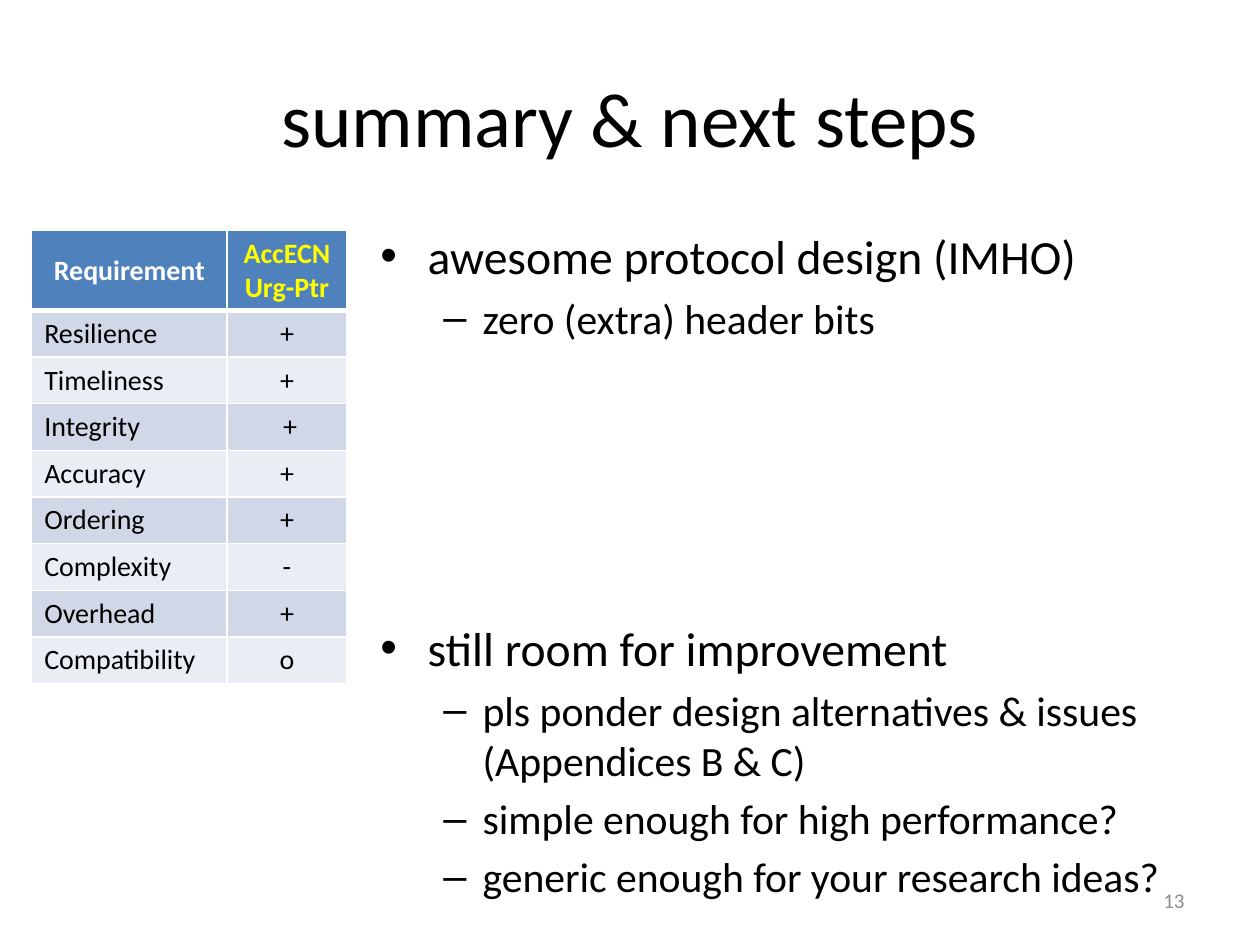
import pptx
import pptx.util
import pptx.dml.color
import pptx.enum.text
import pptx.oxml
import pptx.oxml.ns
from lxml import etree

Cm = pptx.util.Cm
Pt = pptx.util.Pt
ALIGN = pptx.enum.text.PP_ALIGN
MIDDLE = pptx.enum.text.MSO_ANCHOR.MIDDLE
FONT = "Calibri"
HUES = {
    "text": "000000",
    "page": "8C8C8C",
    "white": "FFFFFF",
    "gold": "FFFF00",
    "head": "4F81BD",
    "odd": "D0D8E8",
    "even": "E9EDF4",
}
HEADS = [("Requirement", "white"), ("AccECN\vUrg-Ptr", "gold")]
GRADES = [
    ("Resilience", "+"),
    ("Timeliness", "+"),
    ("Integrity", " +"),
    ("Accuracy", "+"),
    ("Ordering", "+"),
    ("Complexity", "-"),
    ("Overhead", "+"),
    ("Compatibility", "o"),
]
LEVELS = [
    {"mark": "•", "size": 27.2, "left": 0.95, "hang": 0.95},
    {"mark": "–", "size": 23.8, "left": 2.06, "hang": 0.79},
]
POINTS = [
    (0, "awesome protocol design (IMHO)"),
    (1, "zero (extra) header bits"),
    (0, "still room for improvement"),
    (1, "pls ponder design alternatives & issues (Appendices B & C)"),
    (1, "simple enough for high performance?"),
    (1, "generic enough for your research ideas?"),
]
GAP = 158


def color(name):
    return pptx.dml.color.RGBColor.from_string(HUES[name])


def style(para, size, hue="text", align=ALIGN.LEFT, bold=False):
    para.alignment = align
    para.font.name = FONT
    para.font.size = Pt(size)
    para.font.bold = bold
    para.font.color.rgb = color(hue)


def add_title(slide, text):
    title = slide.shapes.title
    title.left, title.top = Cm(1.27), Cm(0.76)
    title.width, title.height = Cm(22.86), Cm(3.18)
    title.text_frame.text = text
    title.text_frame.vertical_anchor = MIDDLE
    style(title.text_frame.paragraphs[0], 44, align=ALIGN.CENTER)


def add_box(slide, left, top, width, height):
    box = slide.shapes.add_textbox(Cm(left), Cm(top), Cm(width), Cm(height))
    box.text_frame.word_wrap = True
    return box.text_frame


def add_mark(para, level):
    props = para._p.get_or_add_pPr()
    props.set("marL", str(Cm(level["left"])))
    props.set("indent", str(-Cm(level["hang"])))
    tag = pptx.oxml.ns.qn("a:buFont")
    etree.SubElement(props, tag).set("typeface", "Arial")
    tag = pptx.oxml.ns.qn("a:buChar")
    etree.SubElement(props, tag).set("char", level["mark"])


def add_points(slide):
    frame = add_box(slide, 7.42, 4.45, 17.14, 12.57)
    for index, (depth, text) in enumerate(POINTS):
        para = frame.paragraphs[0] if index == 0 else frame.add_paragraph()
        level = LEVELS[depth]
        para.text = text
        para.level = depth
        style(para, level["size"])
        new = depth == 0 and index > 0
        para.space_before = Pt(GAP if new else round(level["size"] * 0.2, 1))
        add_mark(para, level)


def add_edges(cell, base):
    props = cell._tc.get_or_add_tcPr()
    for side in ("lnL", "lnR", "lnT", "lnB"):
        line = etree.SubElement(props, pptx.oxml.ns.qn("a:" + side))
        line.set("w", str(Pt(base if side == "lnB" else 1)))
        fill = etree.SubElement(line, pptx.oxml.ns.qn("a:solidFill"))
        tint = etree.SubElement(fill, pptx.oxml.ns.qn("a:srgbClr"))
        tint.set("val", HUES["white"])


def fill_cell(cell, text, fill, hue="text", align=ALIGN.CENTER, head=False):
    cell.text = text
    cell.vertical_anchor = MIDDLE
    style(cell.text_frame.paragraphs[0], 16, hue, align, head)
    add_edges(cell, 3 if head else 1)
    cell.fill.solid()
    cell.fill.fore_color.rgb = color(fill)


def add_grades(slide):
    count = len(GRADES) + 1
    frame = slide.shapes.add_table(
        count, 2, Cm(0.64), Cm(4.65), Cm(6.35), Cm(9.09)
    )
    table = frame.table
    for column, width in zip(table.columns, (3.94, 2.41)):
        column.width = Cm(width)
    for index, row in enumerate(table.rows):
        row.height = Cm(0.94 if index else 1.57)
    for col, (text, hue) in enumerate(HEADS):
        fill_cell(table.cell(0, col), text, "head", hue, head=True)
    for row, (name, grade) in enumerate(GRADES, 1):
        fill = "odd" if row % 2 else "even"
        fill_cell(table.cell(row, 0), name, fill, align=ALIGN.LEFT)
        fill_cell(table.cell(row, 1), grade, fill)


def add_page(slide, text):
    frame = add_box(slide, 18.2, 17.65, 5.93, 1.01)
    frame.text = text
    frame.vertical_anchor = MIDDLE
    style(frame.paragraphs[0], 12, "page", ALIGN.RIGHT)


def main():
    deck = pptx.Presentation()
    deck.slide_width, deck.slide_height = Cm(25.4), Cm(19.05)
    slide = deck.slides.add_slide(deck.slide_layouts[5])
    add_title(slide, "summary & next steps")
    add_points(slide)
    add_page(slide, "13")
    add_grades(slide)
    deck.save("out.pptx")


if __name__ == "__main__":
    main()
